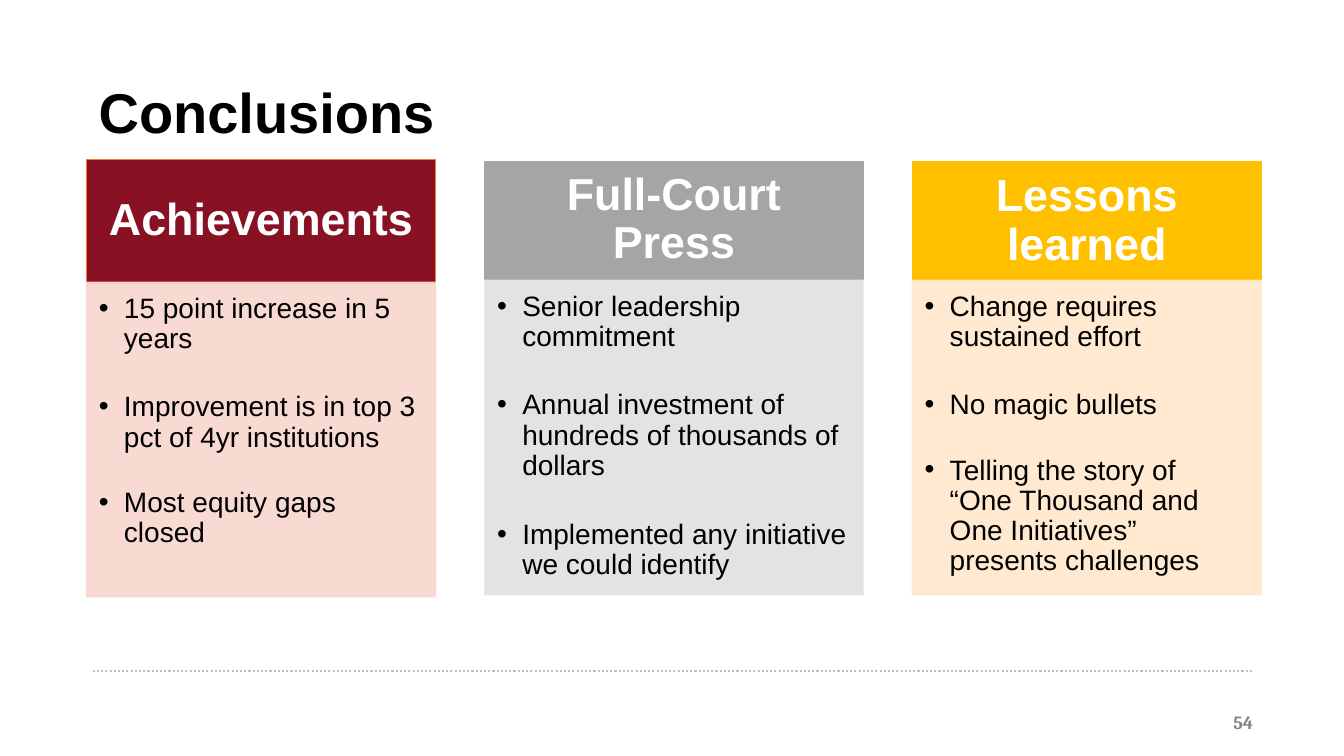
from dataclasses import dataclass

from lxml.etree import SubElement
from pptx import Presentation
from pptx.dml.color import RGBColor
from pptx.enum.dml import MSO_LINE
from pptx.enum.shapes import MSO_CONNECTOR, MSO_SHAPE
from pptx.enum.text import MSO_ANCHOR as Anchor, PP_ALIGN as Align
from pptx.oxml.ns import qn
from pptx.util import Pt

EMU_PER_PX = 9144  # 100 px to the inch


@dataclass(frozen=True)
class Theme:
    sans: str = "Arial"
    serif: str = "Cambria"
    black: str = "000000"
    white: str = "FFFFFF"
    rule: str = "C0C0C0"
    page_number: str = "828383"
    title_size: float = 40
    heading_size: float = 32
    body_size: float = 20
    number_size: float = 13.3
    body_opacity: int = 90


@dataclass(frozen=True)
class Box:
    left: int
    top: int
    width: int
    height: int

    def emu(self) -> list[int]:
        return [px(v) for v in (self.left, self.top, self.width, self.height)]


@dataclass(frozen=True)
class Card:
    heading: str
    items: tuple[str, ...]
    gaps: tuple[int, ...]  # points before each item
    head: Box
    body_top: int
    inset: int
    fill: str
    edge: str
    tint: str


THEME = Theme()
BODY_HEIGHT = 312

CARDS = (
    Card("Achievements",
         ("15 point increase in 5 years",
          "Improvement is in top 3 pct of 4yr institutions",
          "Most equity gaps closed"),
         (0, 27, 25), Box(86, 158, 346, 123), 280, 20,
         "881124", "ED7D31", "F8D7CE"),
    Card("Full-Court Press",
         ("Senior leadership commitment",
          "Annual investment of hundreds of thousands of dollars",
          "Implemented any initiative we could identify"),
         (0, 27, 28), Box(481, 160, 375, 117), 278, 25,
         "A5A5A5", "A5A5A5", "E1E1E1"),
    Card("Lessons learned",
         ("Change requires sustained effort",
          "No magic bullets",
          "Telling the story of “One Thousand and One Initiatives” "
          "presents challenges"),
         (0, 27, 25), Box(905, 160, 346, 119), 278, 25,
         "FFC000", "FFC000", "FFE8CC"),
)


def px(value: int) -> int:
    return value * EMU_PER_PX


def set_frame(frame, anchor, left: int, top: int, right: int, bottom: int) -> None:
    frame.word_wrap = True
    frame.vertical_anchor = anchor
    frame.margin_left, frame.margin_top = px(left), px(top)
    frame.margin_right, frame.margin_bottom = px(right), px(bottom)


def set_font(para, name: str, size: float, color: str, bold: bool = False) -> None:
    para.font.name = name
    para.font.size = Pt(size)
    para.font.bold = bold
    para.font.color.rgb = RGBColor.from_string(color)


def add_panel(page, box: Box, fill: str, edge: str, opacity: int = 100):
    panel = page.shapes.add_shape(MSO_SHAPE.RECTANGLE, *box.emu())
    panel.shadow.inherit = False
    panel.fill.solid()
    panel.fill.fore_color.rgb = RGBColor.from_string(fill)
    panel.line.color.rgb = RGBColor.from_string(edge)
    panel.line.width = Pt(1)
    if opacity < 100:
        for color in panel._element.spPr.iter(qn("a:srgbClr")):
            SubElement(color, qn("a:alpha"), val=str(opacity * 1000))
    return panel.text_frame


def add_label(page, box: Box):
    return page.shapes.add_textbox(*box.emu()).text_frame


def add_bullet(para) -> None:
    props = para._p.get_or_add_pPr()
    props.set("marL", str(px(25)))
    props.set("indent", str(-px(25)))
    SubElement(props, qn("a:buFont"), typeface=THEME.sans)
    SubElement(props, qn("a:buChar"), char="•")


def add_card(page, card: Card) -> None:
    # Coloured heading
    frame = add_panel(page, card.head, card.fill, card.edge)
    set_frame(frame, Anchor.MIDDLE, card.inset, 14, card.inset, 14)
    para = frame.paragraphs[0]
    para.text = card.heading
    para.alignment = Align.CENTER
    para.line_spacing = 0.9
    set_font(para, THEME.sans, THEME.heading_size, THEME.white, True)

    # Tinted body with bullets
    body = Box(card.head.left, card.body_top, card.head.width, BODY_HEIGHT)
    frame = add_panel(page, body, card.tint, card.tint, THEME.body_opacity)
    set_frame(frame, Anchor.TOP, 12, 12, 16, 17)
    for index, (item, gap) in enumerate(zip(card.items, card.gaps)):
        para = frame.add_paragraph() if index else frame.paragraphs[0]
        para.text = item
        para.alignment = Align.LEFT
        para.line_spacing = 0.9
        if gap:
            para.space_before = Pt(gap)
        add_bullet(para)
        set_font(para, THEME.sans, THEME.body_size, THEME.black)


def add_title(page) -> None:
    frame = add_label(page, Box(88, 85, 1149, 77))
    set_frame(frame, Anchor.TOP, 10, 5, 10, 5)
    para = frame.paragraphs[0]
    para.text = "Conclusions"
    para.line_spacing = 0.8
    set_font(para, THEME.sans, THEME.title_size, THEME.black, True)


def add_footer(page) -> None:
    rule = page.shapes.add_connector(
        MSO_CONNECTOR.STRAIGHT, px(92), px(666), px(1242), px(666))
    rule.line.color.rgb = RGBColor.from_string(THEME.rule)
    rule.line.width = Pt(1.5)
    rule.line.dash_style = MSO_LINE.ROUND_DOT
    SubElement(rule._element.spPr, qn("a:effectLst"))

    frame = add_label(page, Box(956, 696, 300, 40))
    set_frame(frame, Anchor.MIDDLE, 13, 7, 13, 7)
    para = frame.paragraphs[0]
    para.text = "54"
    para.alignment = Align.RIGHT
    set_font(para, THEME.serif, THEME.number_size, THEME.page_number, True)


def main() -> None:
    deck = Presentation()
    deck.slide_width, deck.slide_height = px(1333), px(750)
    page = deck.slides.add_slide(deck.slide_layouts[6])
    add_footer(page)
    for card in CARDS:
        add_card(page, card)
    add_title(page)
    deck.save("out.pptx")


if __name__ == "__main__":
    main()
